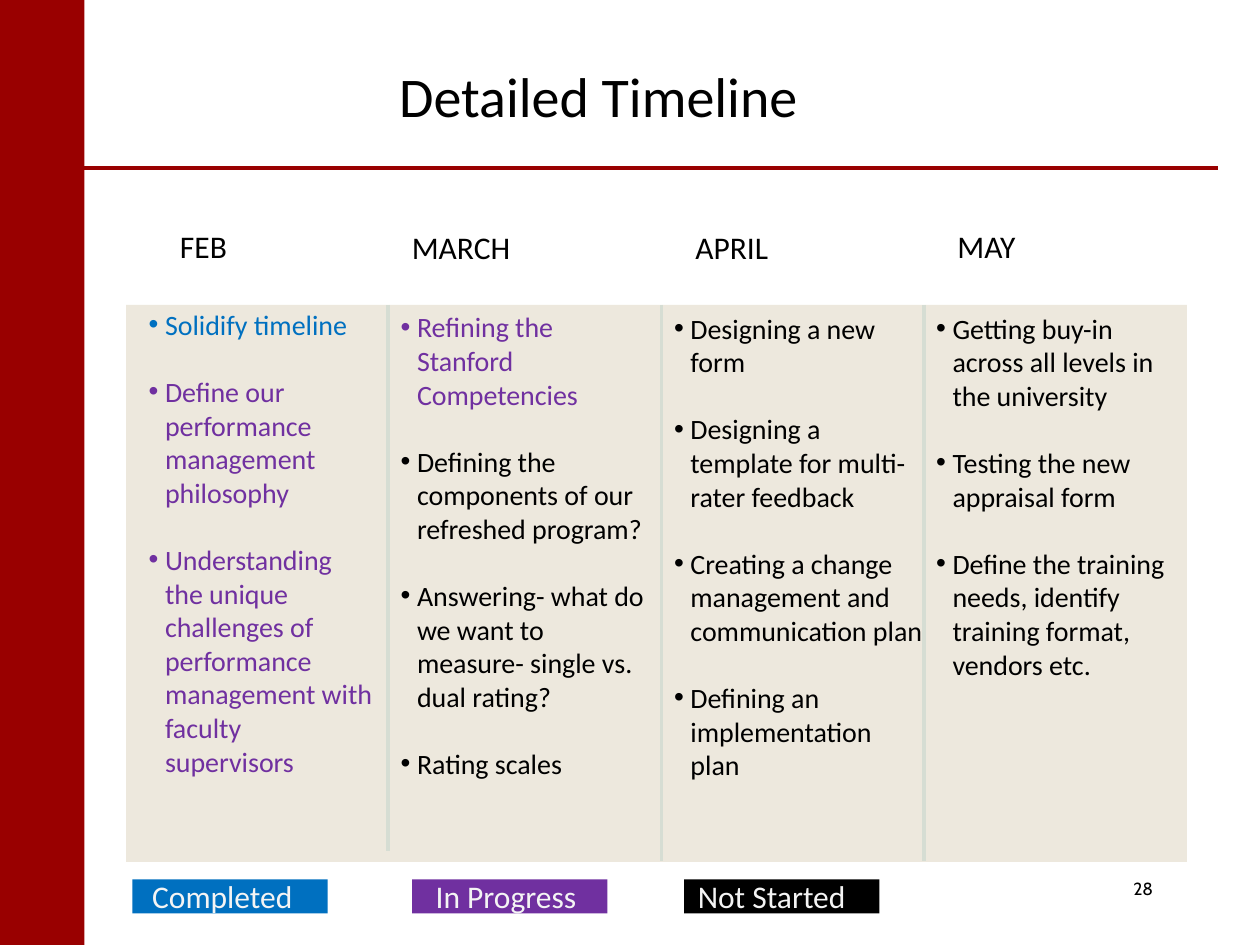
import pptx
import pptx.util
import pptx.dml.color
import pptx.enum.shapes
import pptx.enum.text
from lxml import etree

Inches, Pt = pptx.util.Inches, pptx.util.Pt
Align, Anchor = pptx.enum.text.PP_ALIGN, pptx.enum.text.MSO_ANCHOR

# Content
RED, BLUE, PURPLE, BLACK = "990000", "0070C0", "7030A0", "000000"
PANEL, RULE, PALE = "EDE8DD", "D6DDD3", "F4F4F4"
TITLE = "Detailed Timeline"
# month: name, label left and top, list left, top and width, tasks
MONTHS = [
    ("FEB", 1.33, 1.75, 1.08, 2.39, 2, [
        ("Solidify timeline", BLUE),
        ("Define our performance management philosophy", PURPLE),
        ("Understanding the unique challenges of performance "
         "management with faculty supervisors", PURPLE)]),
    ("MARCH", 3.17, 1.76, 3.08, 2.41, 2.17, [
        ("Refining the Stanford Competencies", PURPLE),
        ("Defining the components of our refreshed program?", BLACK),
        ("Answering- what do we want to measure- single vs. dual rating?",
         BLACK),
        ("Rating scales", BLACK)]),
    ("APRIL", 5.42, 1.76, 5.25, 2.42, 2.17, [
        ("Designing a new form", BLACK),
        ("Designing a template for multi-rater feedback", BLACK),
        ("Creating a change management and communication plan", BLACK),
        ("Defining an implementation plan", BLACK)]),
    ("MAY", 7.5, 1.75, 7.33, 2.42, 2.17, [
        ("Getting buy-in across all levels in the university", BLACK),
        ("Testing the new appraisal form", BLACK),
        ("Define the training needs, identify training format, vendors etc.",
         BLACK)]),
]
# divider: x, bottom
RULES = [(3.08, 6.75), (5.25, 6.83), (7.33, 6.83)]
# status: name, bar left, text left, colour
KEYS = [("Completed", 1.05, 1.11, BLUE),
        ("In Progress", 3.27, 3.36, PURPLE),
        ("Not Started", 5.43, 5.44, BLACK)]

deck = pptx.Presentation()
deck.slide_width, deck.slide_height = Inches(10), Inches(7.5)
slide = deck.slides.add_slide(deck.slide_layouts[4])  # title and four bodies
shapes = slide.shapes


def paint(part, code):
    part.rgb = pptx.dml.color.RGBColor.from_string(code)


def bar(x, y, w, h, fill):
    box = shapes.add_shape(pptx.enum.shapes.MSO_SHAPE.RECTANGLE,
                           Inches(x), Inches(y), Inches(w), Inches(h))
    box.shadow.inherit = False
    box.fill.solid()
    paint(box.fill.fore_color, fill)
    box.line.fill.background()


def line(x, y, x2, y2, color):
    rule = shapes.add_connector(pptx.enum.shapes.MSO_CONNECTOR.STRAIGHT,
                                Inches(x), Inches(y), Inches(x2), Inches(y2))
    paint(rule.line.color, color)
    rule.line.width = Pt(2.25)
    etree.SubElement(rule.element.spPr, pptx.oxml.ns.qn("a:effectLst"))


def bullet(para):
    props = para._p.get_or_add_pPr()
    props.set("marL", str(Inches(0.13)))
    props.set("indent", str(-Inches(0.13)))
    font = etree.SubElement(props, pptx.oxml.ns.qn("a:buFont"))
    font.set("typeface", "Arial")
    mark = etree.SubElement(props, pptx.oxml.ns.qn("a:buChar"))
    mark.set("char", "•")


def write(text, at, box=None, size=18, color=BLACK, face="Calibri",
          align=Align.LEFT, anchor=Anchor.TOP, dots=False, gap=0):
    """Write a string, or a list of (string, colour), into a box."""
    x, y, w, h = map(Inches, at)
    if box is None:
        box = shapes.add_textbox(x, y, w, h)
    else:
        box.left, box.top, box.width, box.height = x, y, w, h
        box.element.getparent().append(box.element)  # bring to front
    frame = box.text_frame
    frame.word_wrap = True
    frame.auto_size = pptx.enum.text.MSO_AUTO_SIZE.NONE
    frame.vertical_anchor = anchor
    items = [(text, color)] if isinstance(text, str) else text
    for i, (words, tint) in enumerate(items):
        para = frame.add_paragraph() if i else frame.paragraphs[0]
        if dots:
            bullet(para)
        para.alignment = align
        para.space_before = Pt(gap if i else 0)
        run = para.add_run()
        run.text = words
        run.font.name, run.font.size, run.font.bold = face, Pt(size), False
        paint(run.font.color, tint)


# Frame and title
bar(0, 0, 0.67, 7.5, RED)
line(0.67, 1.33, 9.67, 1.33, RED)
write(TITLE, (0.75, 0.17, 8, 1.17), box=shapes.title, size=32,
      align=Align.CENTER, anchor=Anchor.MIDDLE)
write("28", (7.92, 6.92, 1.33, 0.42), size=10, face="Cabin",
      align=Align.RIGHT)

# Panel with its dividers
bar(1, 2.42, 8.42, 4.42, PANEL)
for x, end in RULES:
    line(x, 2.42, x, end, RULE)

# Months and their tasks
bodies = list(slide.placeholders)[1:]
for body, (name, x, y, left, top, wide, tasks) in zip(bodies, MONTHS):
    write(name, (x, y, 1.42, 0.4))
    write(tasks, (left, top, wide, 4.3), box=body, size=16, dots=True,
          gap=19.2)

# Status key
for name, x, left, fill in KEYS:
    bar(x, 6.98, 1.55, 0.27, fill)
    write(name, (left, 6.91, 1.4, 0.4), color=PALE)

deck.save("out.pptx")
